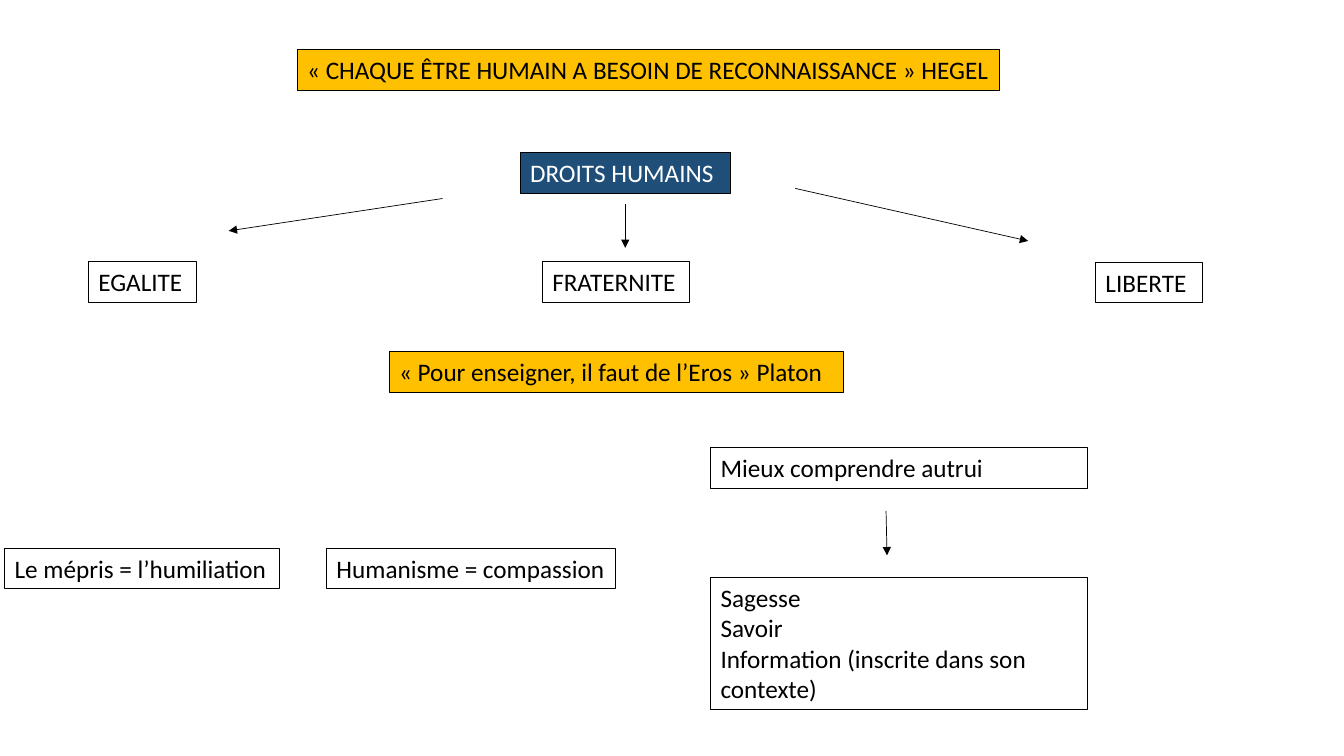
from lxml.etree import SubElement
from pptx import Presentation
from pptx.dml.color import RGBColor
from pptx.enum.shapes import MSO_CONNECTOR
from pptx.enum.text import MSO_AUTO_SIZE
from pptx.oxml.ns import qn
from pptx.util import Pt

COLORS = {"black": "000000", "white": "FFFFFF", "gold": "FFC000", "navy": "1F4E79"}
FONT = {"name": "Calibri", "size": Pt(18)}
FRAME = {"word_wrap": True, "auto_size": MSO_AUTO_SIZE.SHAPE_TO_FIT_TEXT}
ROW = 29.1  # height of a box with one line of text


def color(name):
    return RGBColor.from_string(COLORS[name])


deck = Presentation()
deck.slide_width, deck.slide_height = Pt(960), Pt(540)
slide = deck.slides.add_slide(deck.slide_layouts[6])

# left, top, width, height, fill, text color, text
boxes = [
    (212.4, 35.3, 501.8, ROW, "gold", "black",
     "« CHAQUE ÊTRE HUMAIN A BESOIN DE RECONNAISSANCE » HEGEL"),
    (371.5, 108.9, 150.5, ROW, "navy", "white", "DROITS HUMAINS"),
    (63.2, 186.7, 77, ROW, None, "black", "EGALITE"),
    (387.4, 186.7, 105.1, ROW, None, "black", "FRATERNITE"),
    (782.6, 187.2, 76.3, ROW, None, "black", "LIBERTE"),
    (278, 251, 324.7, ROW, "gold", "black",
     "« Pour enseigner, il faut de l’Eros » Platon"),
    (3.4, 391.5, 196.6, ROW, None, "black", "Le mépris = l’humiliation"),
    (233.3, 391.5, 206.6, ROW, None, "black", "Humanisme = compassion"),
    (507.6, 319.7, 269, ROW, None, "black", "Mieux comprendre autrui"),
    (507.6, 412.5, 269, 94.5, None, "black",
     "Sagesse\nSavoir\nInformation (inscrite dans son contexte)"),
]
for left, top, width, height, fill, ink, text in boxes:
    box = slide.shapes.add_textbox(Pt(left), Pt(top), Pt(width), Pt(height))
    if fill:
        box.fill.solid()
        box.fill.fore_color.rgb = color(fill)
    box.line.color.rgb = color("black")
    box.line.width = Pt(0.75)
    frame = box.text_frame
    frame.text = text
    for key, value in FRAME.items():
        setattr(frame, key, value)
    for para in frame.paragraphs:
        font = para.runs[0].font
        font.color.rgb = color(ink)
        for key, value in FONT.items():
            setattr(font, key, value)

# start x, start y, end x, end y
arrows = [
    (316.1, 141.8, 163.4, 164.9),
    (446.6, 145.4, 446.6, 177.1),
    (568.1, 134.6, 734.4, 172.1),
    (632.9, 365, 633.6, 396.7),
]
for ends in arrows:
    arrow = slide.shapes.add_connector(MSO_CONNECTOR.STRAIGHT, *map(Pt, ends))
    arrow.line.color.rgb = color("black")
    arrow.line.width = Pt(0.5)
    SubElement(arrow.line._get_or_add_ln(), qn("a:tailEnd"), type="triangle")
    SubElement(arrow._element.spPr, qn("a:effectLst"))

deck.save("out.pptx")
